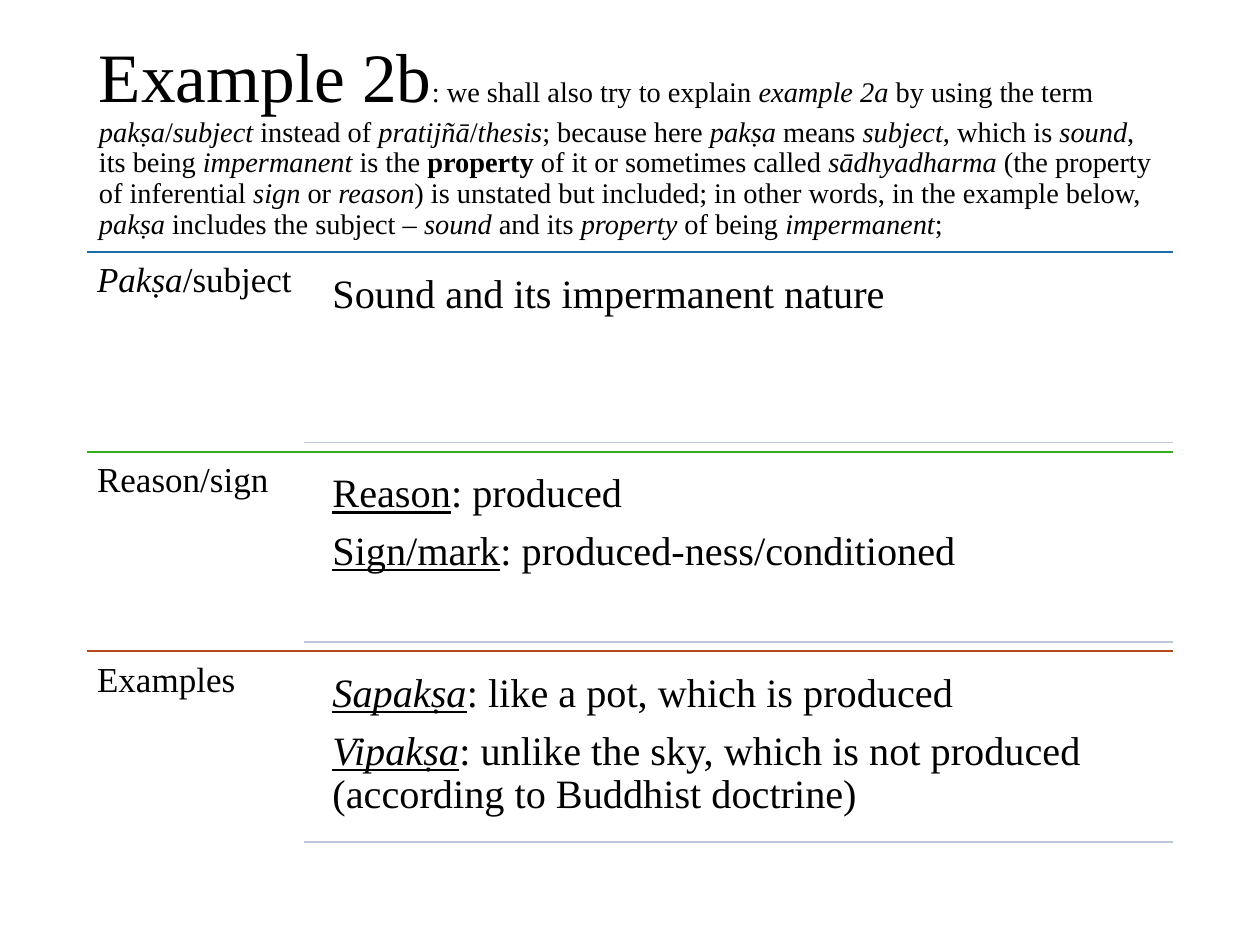
from pptx import Presentation
from pptx.dml.color import RGBColor
from pptx.enum.shapes import MSO_CONNECTOR
from pptx.enum.text import MSO_ANCHOR
from pptx.oxml.ns import qn
from pptx.util import Pt
from lxml.etree import SubElement

BLACK = RGBColor(0x00, 0x00, 0x00)
BLUE = RGBColor(0x1D, 0x6F, 0xA9)
GREEN = RGBColor(0x30, 0xB0, 0x1B)
RUST = RGBColor(0xB7, 0x49, 0x19)
PALE = RGBColor(0xBD, 0xC8, 0xDA)

LEFT, RIGHT = 49.5, 670.5
LABEL_WIDTH = 124.2
RULE_LEFT = 173.7
BODY_LEFT = 183
FIRST_ROW, ROW_HEIGHT = 144, 114.1
BODY_OFFSET, BODY_HEIGHT = 5.3, 103.6

INTRODUCTION = (
    ": we shall also try to explain *example 2a *by using the term *pakṣa*/*subject* "
    "instead of *pratijñā*/*thesis*; because here *pakṣa* means *subject*, which is "
    "*sound*, its being *impermanent* is the "
)
EXPLANATION = (
    " of it or sometimes called *sādhyadharma *(the property of inferential *sign* or "
    "*reason*) is unstated but included; in other words, in the example below, *pakṣa* "
    "includes the subject – *sound* and its *property* of being *impermanent*;"
)

ROWS = [
    (BLUE, [("Pakṣa", "i"), ("/subject", "")],
     [[("Sound and its impermanent nature", "")]]),
    (GREEN, [("Reason/sign", "")],
     [[("Reason", "u"), (": produced", "")],
      [("Sign/mark", "u"), (": produced-ness/conditioned", "")]]),
    (RUST, [("Examples", "")],
     [[("Sapakṣa", "iu"), (": like a pot, which is produced", "")],
      [("Vipakṣa", "iu"),
       (": unlike the sky, which is not produced (according to Buddhist doctrine)", "")]]),
]


def alternate(text):
    return [(part, "i" if index % 2 else "")
            for index, part in enumerate(text.split("*"))]


class SlideBuilder:
    font = "Times New Roman"
    line_spacing = 0.9

    def __init__(self, slide):
        self.slide = slide

    def rule(self, left, top, color):
        connector = self.slide.shapes.add_connector(
            MSO_CONNECTOR.STRAIGHT, Pt(left), Pt(top), Pt(RIGHT), Pt(top))
        connector.line.color.rgb = color
        connector.line.width = Pt(1)
        SubElement(connector._element.spPr, qn("a:effectLst"))

    def text_box(self, left, top, width, height, inset, anchor=MSO_ANCHOR.TOP):
        shape = self.slide.shapes.add_textbox(Pt(left), Pt(top), Pt(width), Pt(height))
        frame = shape.text_frame
        frame.word_wrap = True
        frame.vertical_anchor = anchor
        frame.margin_left = frame.margin_right = Pt(inset[0])
        frame.margin_top = frame.margin_bottom = Pt(inset[1])
        return frame

    def runs(self, paragraph, parts, size):
        paragraph.line_spacing = self.line_spacing
        for text, style in parts:
            run = paragraph.add_run()
            run.text = text
            font = run.font
            font.name = self.font
            font.size = Pt(size)
            font.color.rgb = BLACK
            font.bold = "b" in style
            font.italic = "i" in style
            font.underline = "u" in style

    def title(self):
        frame = self.text_box(LEFT, 28.75, RIGHT - LEFT, 104.4, (7.2, 3.6),
                              MSO_ANCHOR.MIDDLE)
        paragraph = frame.paragraphs[0]
        self.runs(paragraph, [("Example 2b", "")], 39.6)
        parts = alternate(INTRODUCTION) + [("property", "b")] + alternate(EXPLANATION)
        self.runs(paragraph, parts, 16.2)

    def paragraphs(self, frame, lines, size):
        for index, parts in enumerate(lines):
            paragraph = frame.add_paragraph() if index else frame.paragraphs[0]
            paragraph.space_after = Pt(round(size * 0.35))
            self.runs(paragraph, parts, size)

    def row(self, top, color, label, lines):
        body_top = top + BODY_OFFSET
        self.rule(LEFT, top, color)
        label_frame = self.text_box(LEFT, top, LABEL_WIDTH, ROW_HEIGHT, (6, 6))
        self.paragraphs(label_frame, [label], 20)
        body_frame = self.text_box(BODY_LEFT, body_top, RIGHT - BODY_LEFT,
                                   BODY_HEIGHT, (7, 7))
        self.paragraphs(body_frame, lines, 23)
        self.rule(RULE_LEFT, body_top + BODY_HEIGHT, PALE)


def main():
    presentation = Presentation()
    presentation.slide_width = Pt(720)
    presentation.slide_height = Pt(540)
    slide = presentation.slides.add_slide(presentation.slide_layouts[6])
    builder = SlideBuilder(slide)
    builder.title()
    for index, (color, label, lines) in enumerate(ROWS):
        builder.row(FIRST_ROW + index * ROW_HEIGHT, color, label, lines)
    presentation.save("out.pptx")


if __name__ == "__main__":
    main()
